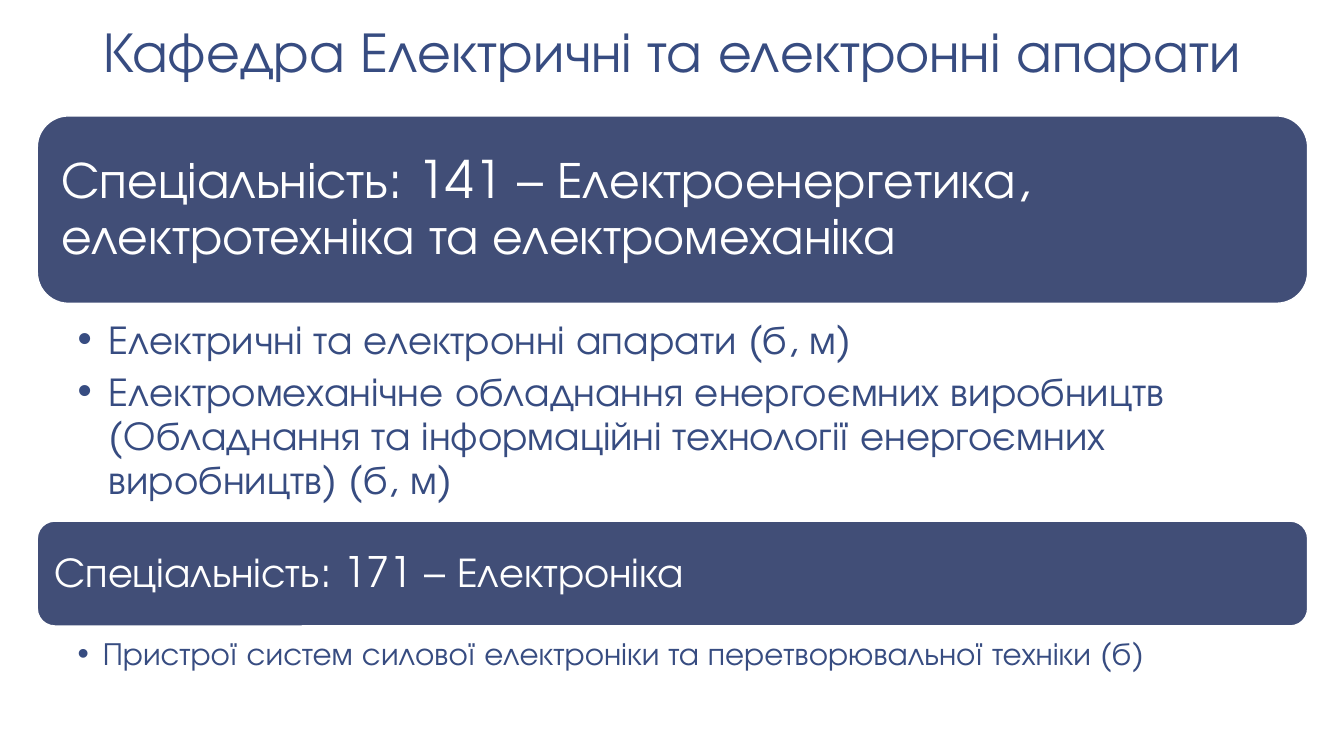
from lxml.etree import SubElement
from pptx import Presentation
from pptx.dml.color import RGBColor
from pptx.enum.shapes import MSO_SHAPE as Shape
from pptx.enum.text import MSO_ANCHOR as Anchor, PP_ALIGN as Align
from pptx.oxml.ns import qn
from pptx.util import Inches, Pt

WHITE = RGBColor(0xFF, 0xFF, 0xFF)
NAVY = RGBColor(0x41, 0x4E, 0x77)
BLUE = RGBColor(0x37, 0x4C, 0x81)
FONT = "TeX Gyre Adventor"
LEFT, WIDTH = 0.37, 12.6
BLANK_LAYOUT = 6


class DepartmentSlide:
    def __init__(self, deck):
        self.page = deck.slides.add_slide(deck.slide_layouts[BLANK_LAYOUT])

    def fill_text(self, box, lines, size, color, margins, anchor=Anchor.TOP,
                  align=Align.LEFT, spacing=0.9, after=0, indent=0):
        """Fill a shape with paragraphs; after is a share of the text size."""
        frame = box.text_frame
        left, top, right, bottom = map(Inches, margins)
        frame_format = {"word_wrap": True, "vertical_anchor": anchor,
                        "margin_left": left, "margin_top": top,
                        "margin_right": right, "margin_bottom": bottom}
        for name, value in frame_format.items():
            setattr(frame, name, value)
        for number, line in enumerate(lines):
            para = frame.add_paragraph() if number else frame.paragraphs[0]
            if indent:
                self.add_bullet(para, indent)
            para_format = {"alignment": align, "line_spacing": spacing,
                           "space_after": Pt(round(size * after, 1))}
            for name, value in para_format.items():
                setattr(para, name, value)
            span = para.add_run()
            span.text = line
            span.font.name = FONT
            span.font.size = Pt(size)
            span.font.color.rgb = color

    def add_bullet(self, para, indent):
        para.level = 1
        settings = para._p.get_or_add_pPr()
        settings.set("marL", str(Inches(indent)))
        settings.set("indent", str(-Inches(indent)))
        SubElement(settings, qn("a:buFont"), typeface="Arial")
        SubElement(settings, qn("a:buChar"), char="•")

    def text_box(self, left, top, width, height):
        return self.page.shapes.add_textbox(*map(Inches, (left, top, width, height)))

    def title(self, text):
        self.fill_text(self.text_box(0, 0.08, 13.33, 0.83), [text], 40.7, BLUE,
                       (0.13, 0.07, 0.13, 0.07), Anchor.BOTTOM, Align.CENTER, 0.85)

    def banner(self, top, height, text, size, margin):
        box = self.page.shapes.add_shape(
            Shape.ROUNDED_RECTANGLE, *map(Inches, (LEFT, top, WIDTH, height)))
        box.shadow.inherit = False
        box.fill.solid()
        box.fill.fore_color.rgb = NAVY
        box.line.color.rgb = WHITE
        box.line.width = Pt(1)
        self.fill_text(box, [text], size, WHITE, [margin] * 4, Anchor.MIDDLE,
                       after=0.35)

    def programmes(self, top, height, lines, size, margins, indent):
        self.fill_text(self.text_box(LEFT, top, WIDTH, height), lines, size, BLUE,
                       margins, after=0.2, indent=indent)


def main():
    deck = Presentation()
    deck.slide_width, deck.slide_height = Inches(13.33), Inches(7.5)
    slide = DepartmentSlide(deck)
    slide.title("Кафедра Електричні та електронні апарати")
    slide.banner(1.15, 1.86, "Спеціальність: 141 – Електроенергетика, "
                 "електротехніка та електромеханіка", 37, 0.15)
    slide.programmes(3.12, 1.98, [
        "Електричні та електронні апарати (б, м)",
        "Електромеханічне обладнання енергоємних виробництв (Обладнання "
        "та інформаційні технології енергоємних виробництв) (б, м)",
    ], 29, (0.4, 0.05, 0.29, 0.05), 0.31)
    slide.banner(5.17, 1.04, "Спеціальність: 171 – Електроніка", 30, 0.12)
    slide.programmes(6.29, 0.62, [
        "Пристрої систем силової електроніки та перетворювальної техніки (б)",
    ], 23, (0.4, 0.04, 0.23, 0.04), 0.25)
    deck.save("out.pptx")


if __name__ == "__main__":
    main()
